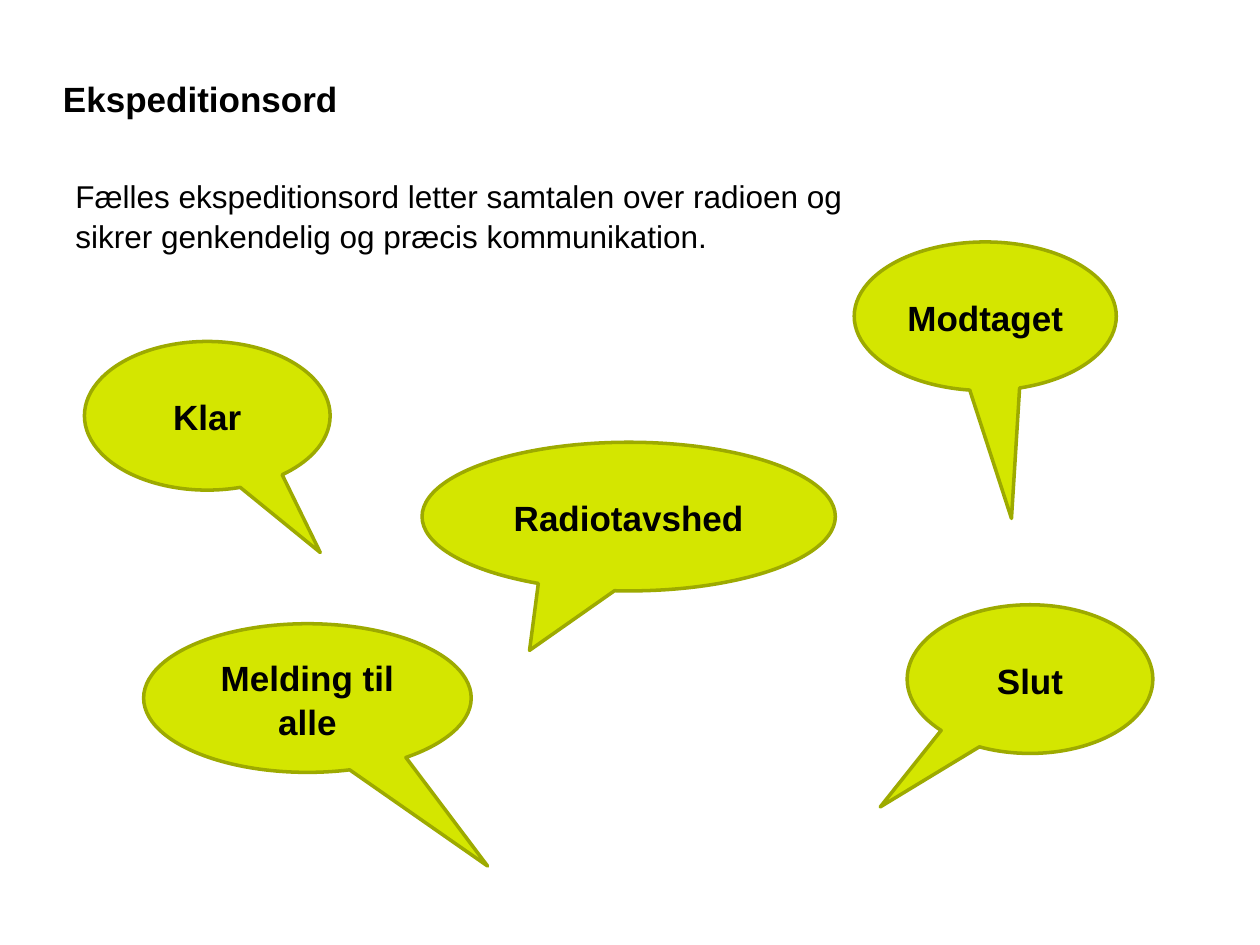
from pptx import Presentation
from pptx.dml.color import RGBColor
from pptx.enum.shapes import MSO_SHAPE
from pptx.enum.text import MSO_ANCHOR, PP_ALIGN
from pptx.util import Inches, Pt

TITLE = "Ekspeditionsord"
INTRO = ("Fælles ekspeditionsord letter samtalen over radioen og "
         "sikrer genkendelig og præcis kommunikation.")

# word, left, top, width, pointer tip as a share of the bubble's size from its centre
BUBBLES = [
    ("Modtaget", 6.78, 1.92, 2.08, (0.10, 1.36)),
    ("Klar", 0.67, 2.71, 1.95, (0.46, 0.92)),
    ("Melding til alle", 1.14, 4.95, 2.6, (0.55, 1.13)),
    ("Radiotavshed", 3.35, 3.51, 3.28, (-0.24, 0.9)),
    ("Slut", 7.2, 4.8, 1.95, (-0.61, 0.86)),
]
BUBBLE_HEIGHT = 1.18

THEME = {
    "font": "Arial",
    "text": RGBColor(0x00, 0x00, 0x00),
    "fill": RGBColor(0xD4, 0xE6, 0x00),
    "line": RGBColor(0x9D, 0xAA, 0x00),
    "line_width": Pt(2),
    "heading_size": Pt(20),
    "body_size": Pt(18),
    "line_spacing": 1.05,
}


def write_text(shape, text, size, bold=False, align=PP_ALIGN.LEFT,
               anchor=MSO_ANCHOR.TOP, margin=None):
    frame = shape.text_frame
    frame.word_wrap = True
    frame.vertical_anchor = anchor
    if margin is not None:
        frame.margin_left = frame.margin_right = margin
        frame.margin_top = frame.margin_bottom = margin
    paragraph = frame.paragraphs[0]
    paragraph.alignment = align
    paragraph.line_spacing = THEME["line_spacing"]
    run = paragraph.add_run()
    run.text = text
    run.font.name = THEME["font"]
    run.font.size = size
    run.font.bold = bold
    run.font.color.rgb = THEME["text"]


def add_bubble(slide, word, left, top, width, tip):
    bubble = slide.shapes.add_shape(
        MSO_SHAPE.OVAL_CALLOUT, Inches(left), Inches(top),
        Inches(width), Inches(BUBBLE_HEIGHT))
    bubble.adjustments[0], bubble.adjustments[1] = tip
    bubble.shadow.inherit = False
    bubble.fill.solid()
    bubble.fill.fore_color.rgb = THEME["fill"]
    bubble.line.color.rgb = THEME["line"]
    bubble.line.width = THEME["line_width"]
    write_text(bubble, word, THEME["heading_size"], bold=True,
               align=PP_ALIGN.CENTER, anchor=MSO_ANCHOR.MIDDLE)


def main():
    presentation = Presentation()
    presentation.slide_width = Inches(10)
    presentation.slide_height = Inches(7.5)
    slide = presentation.slides.add_slide(presentation.slide_layouts[6])

    title = slide.shapes.add_textbox(
        Inches(0.5), Inches(0.6), Inches(7.26), Inches(0.87))
    write_text(title, TITLE, THEME["heading_size"], bold=True, margin=0)

    intro = slide.shapes.add_textbox(
        Inches(0.5), Inches(1.34), Inches(6.91), Inches(0.91))
    write_text(intro, INTRO, THEME["body_size"])

    for bubble in BUBBLES:
        add_bubble(slide, *bubble)

    presentation.save("out.pptx")


if __name__ == "__main__":
    main()
